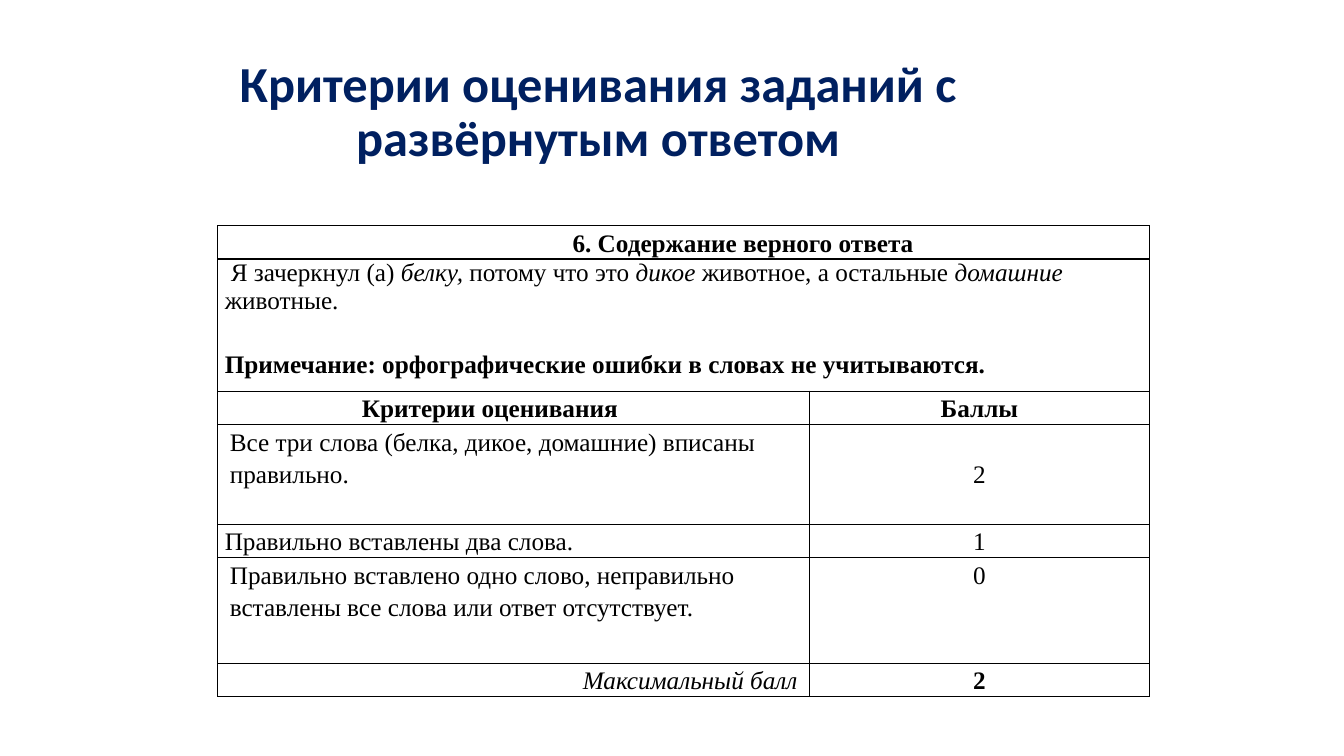
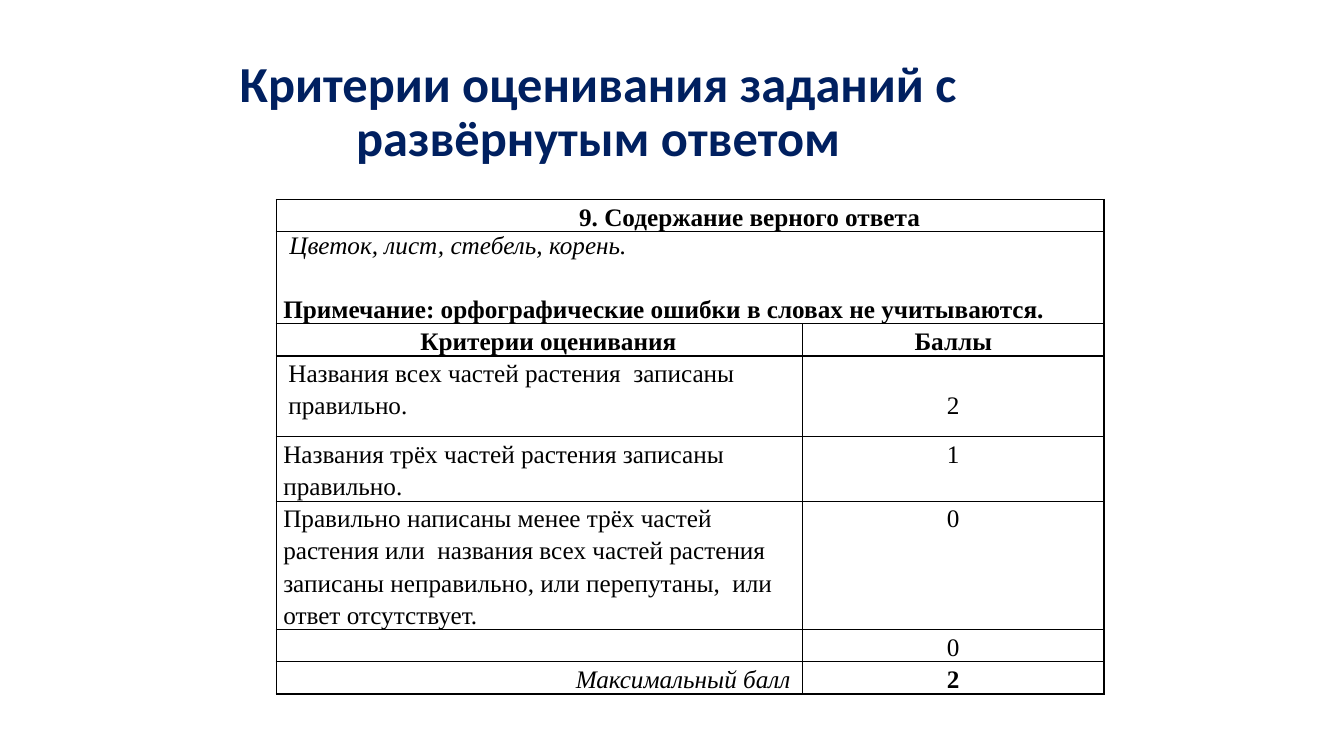
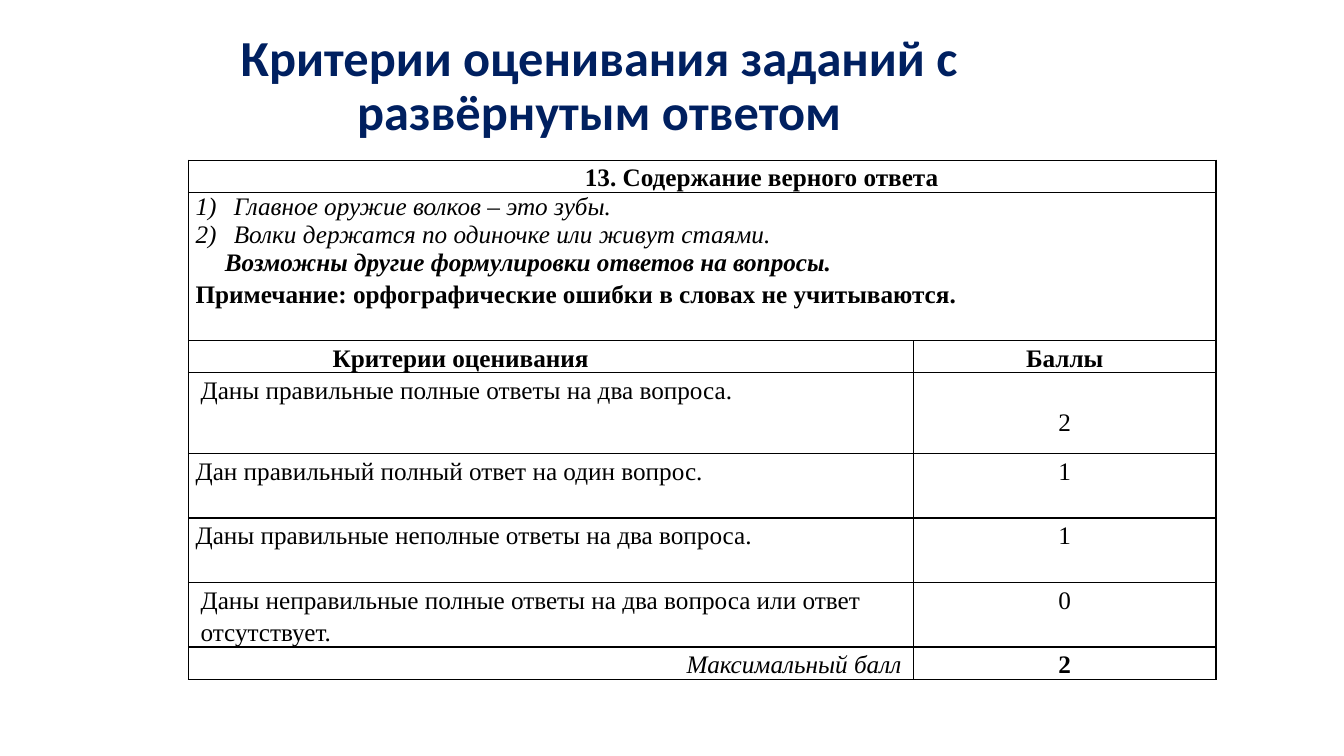
import pptx
import pptx.util
import pptx.dml.color
import pptx.enum.text
import lxml.etree
from dataclasses import dataclass

Inches, Pt = pptx.util.Inches, pptx.util.Pt
RGBColor = pptx.dml.color.RGBColor
ALIGN = pptx.enum.text.PP_ALIGN
ANCHOR = pptx.enum.text.MSO_ANCHOR
A = "{http://schemas.openxmlformats.org/drawingml/2006/main}"


@dataclass(frozen=True)
class Theme:
    title_color: str = "002060"
    text_color: str = "000000"
    border_color: str = "000000"
    title_font: str = "Calibri"
    text_font: str = "Times New Roman"
    title_size: int = 36
    text_size: int = 18
    border_width: int = 1
    side_margin: float = 0.07
    line_height: float = 0.32
    line_spacing: float = 1.15


theme = Theme()
HEADING = "Критерии оценивания заданий с развёрнутым ответом"
NOTE = "Примечание: орфографические ошибки в словах не учитываются."


def set_borders(cell):
    properties = cell._tc.get_or_add_tcPr()
    for side in ("lnL", "lnR", "lnT", "lnB"):
        border = lxml.etree.SubElement(properties, A + side, w=str(Pt(theme.border_width)))
        fill = lxml.etree.SubElement(border, A + "solidFill")
        lxml.etree.SubElement(fill, A + "srgbClr", val=theme.border_color)
    cell.fill.background()


def write(cell, paragraphs, top=0, right=theme.side_margin):
    margins = {"margin_left": theme.side_margin, "margin_right": right,
               "margin_top": top, "margin_bottom": 0}
    for name, value in margins.items():
        setattr(cell, name, Inches(value))
    for index, content in enumerate(paragraphs):
        frame = cell.text_frame
        paragraph = frame.add_paragraph() if index else frame.paragraphs[0]
        properties = paragraph._p.get_or_add_pPr()
        properties.set("marL", str(Inches(content.get("left", 0))))
        properties.set("indent", str(Inches(content.get("first", 0))))
        if content.get("numbered"):
            lxml.etree.SubElement(properties, A + "buFont", typeface=theme.text_font)
            lxml.etree.SubElement(properties, A + "buAutoNum", type="arabicParenR")
        spacing = {"alignment": content.get("align", ALIGN.LEFT),
                   "line_spacing": content.get("spacing", theme.line_spacing),
                   "space_before": Pt(content.get("before", 0))}
        for name, value in spacing.items():
            setattr(paragraph, name, value)
        for text, style in content["runs"]:
            run = paragraph.add_run()
            run.text = text
            look = {"name": theme.text_font, "size": Pt(theme.text_size),
                    "bold": "b" in style, "italic": "i" in style}
            for name, value in look.items():
                setattr(run.font, name, value)
            run.font.color.rgb = RGBColor.from_string(theme.text_color)


spaced_note = {"runs": [(NOTE, "b")], "before": 22.9}
tasks = [
    {
        "number": 6, "title_at": (0.92, 0.4), "table_at": (2.16, 2.24),
        "columns": (5.87, 3.37),
        "rows": (0.33, 1.31, 0.33, 0.99, 0.33, 1.05, 0.33),
        "answer": [
            {"first": 0.06, "spacing": 1.0, "runs": [
                ("Я зачеркнул (а) ", ""), ("белку, ", "i"), ("потому что это ", ""),
                ("дикое", "i"), (" животное, а остальные ", ""),
                ("домашние", "i"), (" животные.", "")]},
            spaced_note,
        ],
        "criteria": [
            ("Все три слова (белка, дикое, домашние) вписаны правильно.", 0.05, "2"),
            ("Правильно вставлены два слова.", 0, "1"),
            ("Правильно вставлено одно слово, неправильно вставлены все слова "
             "или ответ отсутствует.", 0.05, "0"),
        ],
    },
    {
        "number": 9, "title_at": (0.92, 0.4), "table_at": (2.74, 1.98),
        "columns": (5.22, 2.99),
        "rows": (0.32, 0.91, 0.32, 0.8, 0.64, 1.27, 0.32, 0.32),
        "answer": [
            {"first": 0.06, "spacing": 1.0,
             "runs": [("Цветок, лист, стебель, корень.", "i")]},
            spaced_note,
        ],
        "criteria": [
            ("Названия всех частей растения  записаны правильно.", 0.05, "2"),
            ("Названия трёх частей растения записаны правильно.", 0, "1"),
            ("Правильно написаны менее трёх частей растения или  названия всех частей "
             "растения записаны неправильно, или перепутаны,  или ответ отсутствует.", 0, "0"),
            ("", 0, "0"),
        ],
    },
    {
        "number": 13, "title_at": (0.93, 0.14), "table_at": (1.87, 1.59),
        "columns": (7.19, 3),
        "rows": (0.32, 1.47, 0.32, 0.8, 0.64, 0.64, 0.64, 0.32),
        "answer": [
            {"left": 0.38, "first": -0.38, "numbered": True, "spacing": 1.0,
             "runs": [("Главное оружие волков – это зубы.", "i")]},
            {"left": 0.38, "first": -0.38, "numbered": True, "spacing": 1.0, "before": 0.2,
             "runs": [("Волки держатся по одиночке или живут стаями.", "i")]},
            {"left": 0.29, "spacing": 1.0, "before": 0.2,
             "runs": [("Возможны другие формулировки ответов на вопросы.", "bi")]},
            {"runs": [(NOTE, "b")]},
        ],
        "criteria": [
            ("Даны правильные полные ответы на два вопроса.", 0.05, "2"),
            ("Дан правильный полный ответ на один вопрос.", 0, "1"),
            ("Даны правильные неполные ответы на два вопроса.", 0, "1"),
            ("Даны неправильные полные ответы на два вопроса или ответ отсутствует.", 0.05, "0"),
        ],
    },
]

deck = pptx.Presentation()
deck.slide_width, deck.slide_height = Inches(13.33), Inches(7.5)

for task in tasks:
    slide = deck.slides.add_slide(deck.slide_layouts[5])
    heading = slide.shapes.title
    heading_box = dict(zip(("left", "top", "width", "height"), (*task["title_at"], 10.03, 1.45)))
    for name, value in heading_box.items():
        setattr(heading, name, Inches(value))
    heading.text_frame.text = HEADING
    heading.text_frame.auto_size = pptx.enum.text.MSO_AUTO_SIZE.NONE
    heading.text_frame.vertical_anchor = ANCHOR.MIDDLE
    heading_line = heading.text_frame.paragraphs[0]
    heading_line.alignment = ALIGN.CENTER
    heading_line.line_spacing = 0.9
    heading_font = heading_line.runs[0].font
    heading_look = {"name": theme.title_font, "size": Pt(theme.title_size), "bold": True}
    for name, value in heading_look.items():
        setattr(heading_font, name, value)
    heading_font.color.rgb = RGBColor.from_string(theme.title_color)

    widths, heights = task["columns"], task["rows"]
    rubric = slide.shapes.add_table(
        len(heights), len(widths), *map(Inches, task["table_at"]),
        Inches(sum(widths)), Inches(sum(heights))).table
    rubric.first_row = rubric.horz_banding = False
    for column, width in zip(rubric.columns, widths):
        column.width = Inches(width)
    for row, height in zip(rubric.rows, heights):
        row.height = Inches(height)
    for cell in rubric.iter_cells():
        set_borders(cell)
    for index in (0, 1):
        rubric.cell(index, 0).merge(rubric.cell(index, 1))

    write(rubric.cell(0, 0), [{"align": ALIGN.CENTER, "left": 1.18, "runs": [
        (f"{task['number']}. Содержание верного ответа", "b")]}])
    write(rubric.cell(1, 0), task["answer"])
    write(rubric.cell(2, 0), [{"left": 1.36, "runs": [("Критерии оценивания", "b")]}])
    write(rubric.cell(2, 1), [{"align": ALIGN.CENTER, "runs": [("Баллы", "b")]}])
    for index, (criterion, indent, points) in enumerate(task["criteria"], start=3):
        runs = [(criterion, "")] if criterion else []
        write(rubric.cell(index, 0), [{"left": indent, "runs": runs}])
        write(rubric.cell(index, 1), [{"align": ALIGN.CENTER, "runs": [(points, "")]}],
              top=theme.line_height if index == 3 else 0)
    total = len(heights) - 1
    write(rubric.cell(total, 0), [{"align": ALIGN.RIGHT, "runs": [("Максимальный балл", "i")]}],
          right=0.12)
    write(rubric.cell(total, 1), [{"align": ALIGN.CENTER, "runs": [("2", "b")]}])

deck.save("out.pptx")
